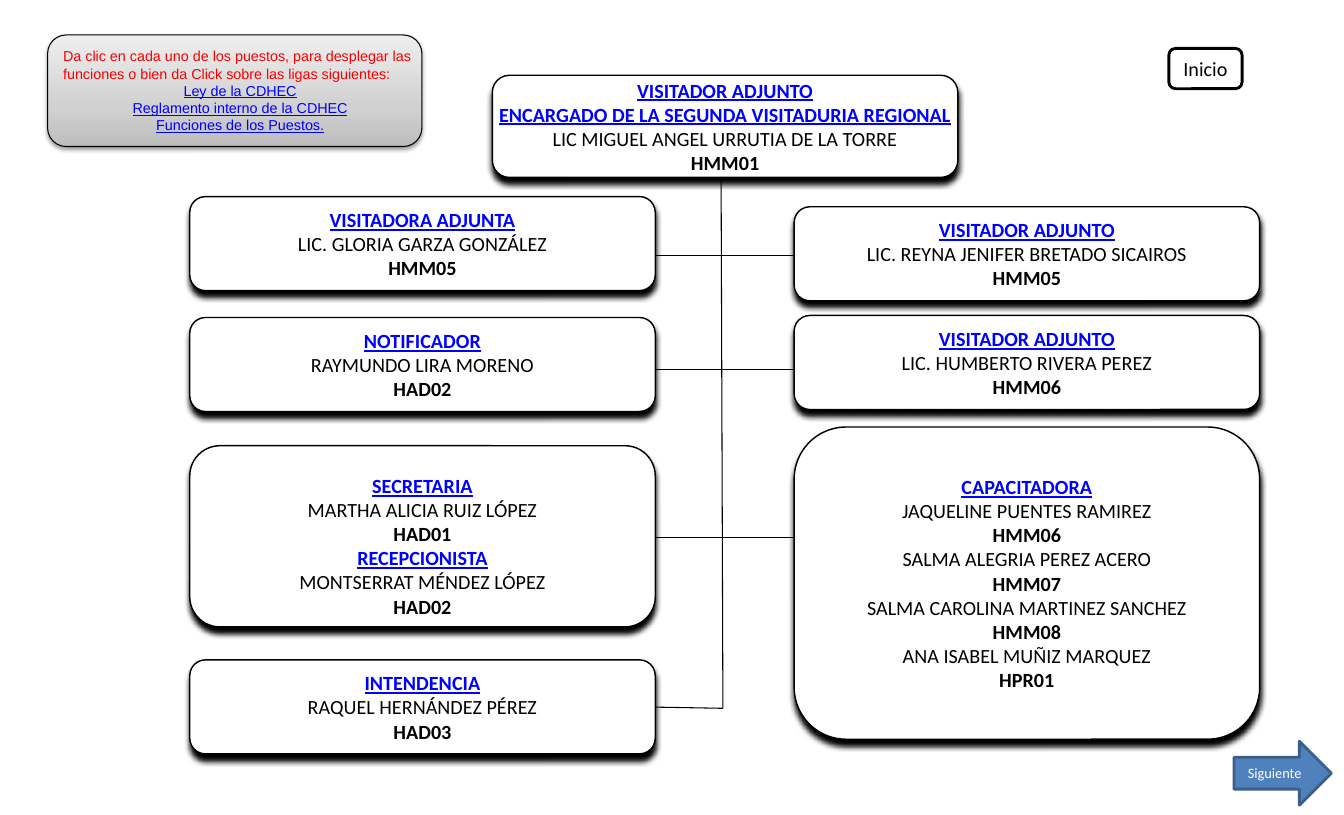
from copy import deepcopy
from dataclasses import dataclass

from lxml import etree
from pptx import Presentation
from pptx.dml.color import RGBColor
from pptx.enum import shapes, text
from pptx.oxml import ns
from pptx.util import Cm, Pt


@dataclass(frozen=True)
class Theme:
    ink: str = "000000"
    paper: str = "FFFFFF"
    link: str = "0000FF"
    notice: str = "FF0000"
    arrow: str = "4F81BD"
    arrow_edge: str = "3A5F8C"
    panel: tuple = ((0, "BDBDBD"), (0.35, "D1D1D1"), (1, "EEEEEE"))
    chart_font: str = "Calibri"
    help_font: str = "Arial"
    body: int = 14
    small: int = 10
    hairline: float = 0.75


def rgb(value):
    return RGBColor.from_string(value)


def write_line(frame, words, *, first, font, size, color, bold=False,
               underline=False, align=text.PP_ALIGN.CENTER):
    paragraph = frame.paragraphs[0] if first else frame.add_paragraph()
    paragraph.alignment = align
    run = paragraph.add_run()
    run.text = words
    run.font.name, run.font.size = font, Pt(size)
    run.font.bold, run.font.underline = bold, underline
    run.font.color.rgb = rgb(color)


def cast_shadow(shape, alpha, blur, distance):
    """Add a downward outer shadow; blur and distance are in points."""
    effects = shape.element.spPr.find(ns.qn("a:effectLst"))
    shadow = etree.SubElement(
        effects, ns.qn("a:outerShdw"), blurRad=str(Pt(blur)),
        dist=str(Pt(distance)), dir="5400000", rotWithShape="0")
    color = etree.SubElement(shadow, ns.qn("a:srgbClr"), val=Theme.ink)
    etree.SubElement(color, ns.qn("a:alpha"), val=str(alpha * 1000))


class OrgChart:
    def __init__(self, slide, theme):
        self.slide, self.theme = slide, theme

    def line(self, x1, y1, x2, y2):
        connector = self.slide.shapes.add_connector(
            shapes.MSO_CONNECTOR.STRAIGHT, Cm(x1), Cm(y1), Cm(x2), Cm(y2))
        connector.line.color.rgb = rgb(self.theme.ink)
        connector.line.width = Pt(self.theme.hairline)
        etree.SubElement(connector._element.spPr, ns.qn("a:effectLst"))

    def shape(self, kind, x, y, width, height, *, fill, edge, weight):
        shape = self.slide.shapes.add_shape(
            kind, Cm(x), Cm(y), Cm(width), Cm(height))
        shape.shadow.inherit = False
        shape.fill.solid()
        shape.fill.fore_color.rgb = rgb(fill)
        shape.line.color.rgb = rgb(edge)
        shape.line.width = Pt(weight)
        shape.text_frame.vertical_anchor = text.MSO_ANCHOR.MIDDLE
        return shape

    def rounded(self, x, y, width, height, weight):
        return self.shape(shapes.MSO_SHAPE.ROUNDED_RECTANGLE, x, y, width, height,
                          fill=self.theme.paper, edge=self.theme.ink, weight=weight)

    def card(self, x, y, posts, height=2.31, drop=0):
        """Draw a box of posts, each a role and its (name, code) pairs."""
        box = self.rounded(x, y, 11.43, height, 1)
        cast_shadow(box, 100, 4, 4)
        frame = box.text_frame
        frame.word_wrap = False
        frame.margin_left = frame.margin_right = Cm(0.43)
        frame.margin_top, frame.margin_bottom = Cm(0.23 + drop), Cm(0.23)
        theme = self.theme
        role_style = dict(color=theme.link, bold=True, underline=True)
        lines = []
        for role, staff in posts:
            lines.append((role, role_style))
            for name, code in staff:
                lines.append((name, dict(color=theme.ink)))
                lines.append((code, dict(color=theme.ink, bold=True)))
        for index, (words, style) in enumerate(lines):
            write_line(frame, words, first=index == 0, font=theme.chart_font,
                       size=theme.body, **style)

    def button(self, kind, x, y, width, height, label, *, size, color, fill, edge):
        shape = self.shape(kind, x, y, width, height, fill=fill, edge=edge, weight=2)
        write_line(shape.text_frame, label, first=True,
                   font=self.theme.chart_font, size=size, color=color)

    def help_panel(self, x, y, width, height):
        panel = self.rounded(x, y, width, height, self.theme.hairline)
        cast_shadow(panel, 38, 3.1, 1.6)
        panel.fill.gradient()
        panel.fill.gradient_angle = 90
        stop_list = panel.element.spPr.find(ns.qn("a:gradFill")).find(ns.qn("a:gsLst"))
        stop_list.append(deepcopy(stop_list[-1]))
        for stop, (position, color) in zip(panel.fill.gradient_stops, self.theme.panel):
            stop.position = position
            stop.color.rgb = rgb(color)

    def help_text(self, x, y, width, height, instruction, links):
        frame = self.slide.shapes.add_textbox(
            Cm(x), Cm(y), Cm(width), Cm(height)).text_frame
        frame.word_wrap = True
        style = dict(font=self.theme.help_font, size=self.theme.small)
        write_line(frame, instruction, first=True, color=self.theme.notice,
                   align=text.PP_ALIGN.LEFT, **style)
        for link in links:
            write_line(frame, link, first=False, color=self.theme.link,
                       underline=True, **style)


def main():
    deck = Presentation()
    deck.slide_width, deck.slide_height = Cm(33), Cm(20.02)
    theme = Theme()
    chart = OrgChart(deck.slides.add_slide(deck.slide_layouts[6]), theme)

    chart.line(17.7, 2.74, 17.75, 17.4)
    for start, end, level in ((14.71, 20.55, 6.27), (14.91, 20.73, 9.07),
                              (14.86, 20.7, 13.21)):
        chart.line(start, level, end, level)
    chart.line(16.1, 17.37, 17.75, 17.4)

    chart.card(12.09, 1.85, [
        ("VISITADOR ADJUNTO", []),
        ("ENCARGADO DE LA SEGUNDA VISITADURIA REGIONAL",
         [("LIC MIGUEL ANGEL URRUTIA DE LA TORRE", "HMM01")]),
    ], height=2.51)

    left, right = 4.66, 19.5
    for x, y, role, name, code in (
        (left, 4.83, "VISITADORA ADJUNTA", "LIC. GLORIA GARZA GONZÁLEZ", "HMM05"),
        (left, 7.8, "NOTIFICADOR", "RAYMUNDO LIRA MORENO", "HAD02"),
        (left, 16.21, "INTENDENCIA", "RAQUEL HERNÁNDEZ PÉREZ", "HAD03"),
        (right, 5.08, "VISITADOR ADJUNTO", "LIC. REYNA JENIFER BRETADO SICAIROS", "HMM05"),
        (right, 7.75, "VISITADOR ADJUNTO", "LIC. HUMBERTO RIVERA PEREZ", "HMM06"),
    ):
        chart.card(x, y, [(role, [(name, code)])])
    chart.card(left, 10.95, [
        ("SECRETARIA", [("MARTHA ALICIA RUIZ LÓPEZ", "HAD01")]),
        ("RECEPCIONISTA", [("MONTSERRAT MÉNDEZ LÓPEZ", "HAD02")]),
    ], height=4.45, drop=0.46)
    chart.card(right, 10.49, [("CAPACITADORA", [
        ("JAQUELINE PUENTES RAMIREZ", "HMM06"),
        ("SALMA ALEGRIA PEREZ ACERO", "HMM07"),
        ("SALMA CAROLINA MARTINEZ SANCHEZ", "HMM08"),
        ("ANA ISABEL MUÑIZ MARQUEZ", "HPR01"),
    ])], height=7.67)

    chart.help_panel(1.17, 0.86, 9.19, 2.74)
    chart.help_text(
        1.3, 1.04, 9.19, 2.39,
        "Da clic en cada uno de los puestos, para desplegar las funciones "
        "o bien da Click sobre las ligas siguientes:",
        ["Ley de la CDHEC", "Reglamento interno de la CDHEC",
         "Funciones de los Puestos."])
    chart.button(shapes.MSO_SHAPE.ROUNDED_RECTANGLE, 28.7, 1.19, 1.8, 0.99, "Inicio",
                 size=theme.body, color=theme.ink, fill=theme.paper, edge=theme.ink)
    chart.button(shapes.MSO_SHAPE.RIGHT_ARROW, 30.3, 18.21, 2.39, 1.57, "Siguiente",
                 size=theme.small, color=theme.paper, fill=theme.arrow,
                 edge=theme.arrow_edge)
    deck.save("out.pptx")


if __name__ == "__main__":
    main()
